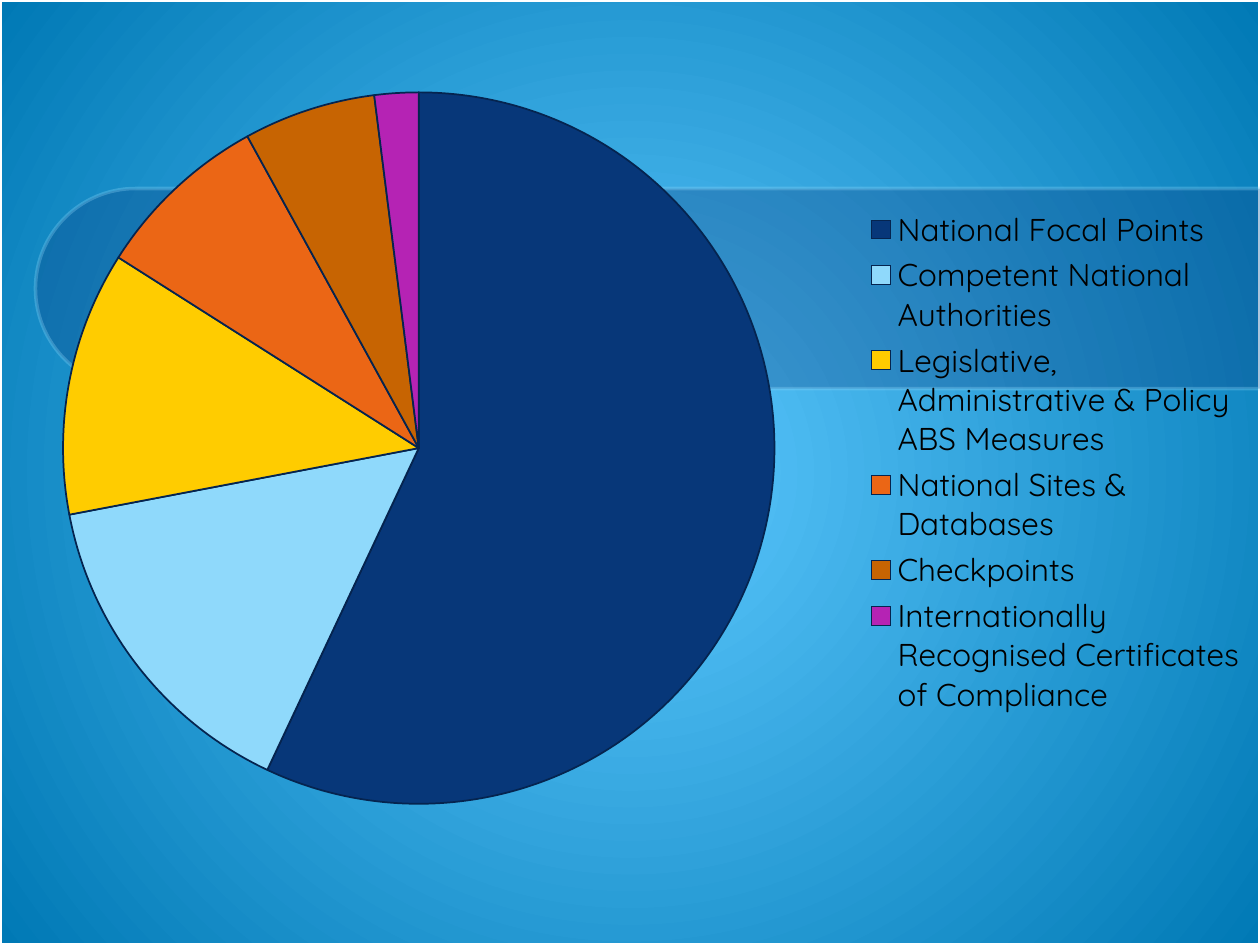
"""Build a slide with a pie chart of record types over a blue gradient."""
from dataclasses import dataclass
from typing import Optional

from lxml import etree
from pptx import Presentation
from pptx import util as u
from pptx.chart.data import CategoryChartData
from pptx.dml.color import RGBColor
from pptx.enum import chart as chart_enum
from pptx.enum import shapes
from pptx.oxml import parse_xml
from pptx.oxml.ns import nsdecls, qn

EMU_PER_PX = 914400 / 126
SLIDE_SIZE = (1260, 945)
FONT = "Quicksand"
COLOURS = {
    "glow": "5DC9FF",
    "edge": "0079B5",
    "frame": "FFFFFF",
    "navy": "073779",
    "sky": "8FD9FB",
    "yellow": "FFCC00",
    "orange": "EB6615",
    "brown": "C76402",
    "purple": "B523B4",
    "outline": "05244F",
    "text": "000000",
}


@dataclass
class Panel:
    preset: shapes.MSO_SHAPE
    box: tuple[int, int, int, int]
    line: str
    fill: Optional[str] = None
    opacity: int = 100
    rotation: int = 0


@dataclass
class Slice:
    label: str
    value: int
    colour: str


PANELS = [
    Panel(shapes.MSO_SHAPE.RECTANGLE, (0, 0, *SLIDE_SIZE), "frame"),
    Panel(shapes.MSO_SHAPE.ROUND_2_SAME_RECTANGLE, (548, -324, 200, 1225),
          "sky", "navy", 30, 270),
]
SLICES = [
    Slice("National Focal Points", 57, "navy"),
    Slice("Competent National Authorities", 15, "sky"),
    Slice("Legislative, Administrative & Policy ABS Measures", 12, "yellow"),
    Slice("National Sites & Databases", 8, "orange"),
    Slice("Checkpoints", 6, "brown"),
    Slice("Internationally Recognised Certificates of Compliance", 2, "purple"),
]
CHART_BOX = (32, 0, 1228, 924)
PLOT_LAYOUT = {"x": 0, "y": 0.1, "w": 0.63, "h": 0.77}
LEGEND_FORMAT = {
    "position": chart_enum.XL_LEGEND_POSITION.RIGHT,
    "include_in_layout": False,
}
FONT_FORMAT = {"name": FONT, "size": u.Pt(18), "bold": False}


def px(length: int) -> int:
    return round(length * EMU_PER_PX)


def colour(name: str) -> RGBColor:
    return RGBColor.from_string(COLOURS[name])


def apply_format(target: object, values: dict) -> None:
    for name, value in values.items():
        setattr(target, name, value)


def paint_background(slide) -> None:
    fill = slide.background.fill
    fill.gradient()
    for stop, name, position in zip(fill.gradient_stops, ("glow", "edge"), (0, 1)):
        stop.color.rgb = colour(name)
        stop.position = position
    gradient = next(slide.background._cSld.iter(qn("a:gradFill")))
    radial = parse_xml(
        f'<a:path {nsdecls("a")} path="circle">'
        '<a:fillToRect l="50000" t="50000" r="50000" b="50000"/></a:path>')
    gradient.replace(gradient.find(qn("a:lin")), radial)


def draw_panel(slide, panel: Panel) -> None:
    shape = slide.shapes.add_shape(panel.preset, *map(px, panel.box))
    shape.shadow.inherit = False
    shape.rotation = panel.rotation
    if panel.fill:
        apply_format(shape.adjustments, {})
        shape.adjustments[0] = 0.5
        shape.fill.solid()
        shape.fill.fore_color.rgb = colour(panel.fill)
    else:
        shape.fill.background()
    shape.line.width = u.Pt(2)
    shape.line.color.rgb = colour(panel.line)
    if panel.opacity < 100:
        for element in shape._element.spPr.iter(qn("a:srgbClr")):
            etree.SubElement(element, qn("a:alpha"), val=str(panel.opacity * 1000))


def place_plot(chart, layout: dict[str, float]) -> None:
    modes = {"layoutTarget": "inner", "xMode": "edge", "yMode": "edge"}
    plot_area = chart._chartSpace.chart.plotArea
    for old in plot_area.findall(qn("c:layout")):
        plot_area.remove(old)
    element = etree.Element(qn("c:layout"))
    manual = etree.SubElement(element, qn("c:manualLayout"))
    for name, value in {**modes, **layout}.items():
        etree.SubElement(manual, qn(f"c:{name}"), val=str(value))
    plot_area.insert(0, element)


def draw_pie(slide, slices: list[Slice]) -> None:
    data = CategoryChartData()
    data.categories = [item.label for item in slices]
    data.add_series("Series 1", [item.value for item in slices])
    chart = slide.shapes.add_chart(
        chart_enum.XL_CHART_TYPE.PIE, *map(px, CHART_BOX), data).chart
    apply_format(chart, {"has_title": False, "has_legend": True})
    apply_format(chart.legend, LEGEND_FORMAT)
    for font in (chart.font, chart.legend.font):
        apply_format(font, FONT_FORMAT)
        font.color.rgb = colour("text")
    plot = chart.plots[0]
    plot.vary_by_categories = True
    for index, item in enumerate(slices):
        point_format = plot.series[0].points[index].format
        point_format.fill.solid()
        point_format.fill.fore_color.rgb = colour(item.colour)
        point_format.line.width = u.Pt(1)
        point_format.line.color.rgb = colour("outline")
    place_plot(chart, PLOT_LAYOUT)


def main() -> None:
    presentation = Presentation()
    presentation.slide_width, presentation.slide_height = map(px, SLIDE_SIZE)
    slide = presentation.slides.add_slide(presentation.slide_layouts[6])
    paint_background(slide)
    for panel in PANELS:
        draw_panel(slide, panel)
    draw_pie(slide, SLICES)
    presentation.save("out.pptx")


if __name__ == "__main__":
    main()
